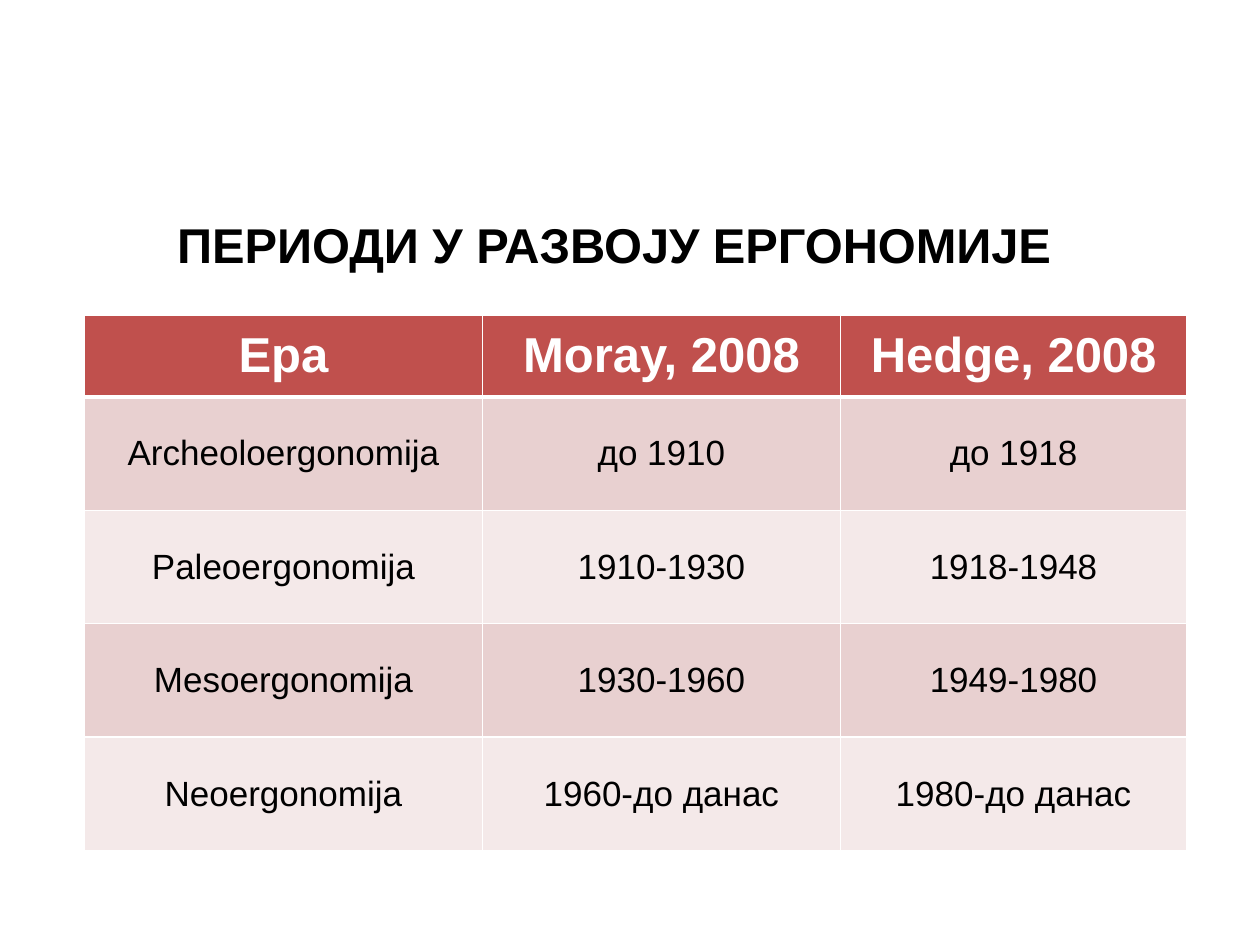
from lxml import etree
from pptx import Presentation
from pptx.dml.color import RGBColor
from pptx.enum.text import MSO_ANCHOR, PP_ALIGN
from pptx.oxml.ns import qn
from pptx.util import Inches, Pt

CENTER = PP_ALIGN.CENTER
MIDDLE = MSO_ANCHOR.MIDDLE
BOTTOM = MSO_ANCHOR.BOTTOM

BLACK = RGBColor(0x00, 0x00, 0x00)
WHITE = RGBColor(0xFF, 0xFF, 0xFF)
HEADER_RED = RGBColor(0xC0, 0x50, 0x4D)
BAND_DARK = RGBColor(0xE8, 0xD0, 0xD0)
BAND_LIGHT = RGBColor(0xF4, 0xE9, 0xE9)


def add_text(paragraph, text, size, color, bold):
    paragraph.alignment = CENTER
    run = paragraph.add_run()
    run.text = text
    run.font.name = "Arial"
    run.font.size = Pt(size)
    run.font.bold = bold
    run.font.color.rgb = color


def add_border(cell, side, points):
    properties = cell._tc.get_or_add_tcPr()
    line = etree.SubElement(properties, qn(f"a:ln{side}"), w=str(Pt(points)))
    fill = etree.SubElement(line, qn("a:solidFill"))
    etree.SubElement(fill, qn("a:srgbClr"), val=str(WHITE))


presentation = Presentation()
presentation.slide_width = Inches(10)
presentation.slide_height = Inches(7.5)
slide = presentation.slides.add_slide(presentation.slide_layouts[6])

# Title
title = slide.shapes.add_textbox(Inches(0.5), Inches(1.25), Inches(8.75), Inches(0.92))
title_frame = title.text_frame
title_frame.word_wrap = True
title_frame.vertical_anchor = BOTTOM
title_frame.margin_bottom = 0
add_text(title_frame.paragraphs[0], "ПЕРИОДИ У РАЗВОЈУ ЕРГОНОМИЈЕ", 27.9, BLACK, True)

# Table of eras
eras = [
    ("Eра", "Moray, 2008", "Hedge, 2008"),
    ("Archeoloergonomija", "до 1910", "до 1918"),
    ("Paleoergonomija", "1910-1930", "1918-1948"),
    ("Mesoergonomija", "1930-1960", "1949-1980"),
    ("Neoergonomija", "1960-до данас", "1980-до данас"),
]
table = slide.shapes.add_table(
    len(eras), 3, Inches(0.67), Inches(2.5), Inches(8.75), Inches(4.25)
).table
for column, width in zip(table.columns, (3.16, 2.84, 2.75)):
    column.width = Inches(width)

for row_index, era in enumerate(eras):
    is_header = row_index == 0
    table.rows[row_index].height = Inches(0.65 if is_header else 0.9)
    if is_header:
        fill_color, size, text_color = HEADER_RED, 28, WHITE
    else:
        fill_color = BAND_DARK if row_index % 2 else BAND_LIGHT
        size, text_color = 20, BLACK
    for column_index, text in enumerate(era):
        cell = table.cell(row_index, column_index)
        cell.vertical_anchor = MIDDLE
        add_text(cell.text_frame.paragraphs[0], text, size, text_color, is_header)
        # Borders come before the fill in the cell properties
        add_border(cell, "L", 1)
        add_border(cell, "R", 1)
        add_border(cell, "T", 3 if row_index == 1 else 1)
        add_border(cell, "B", 3 if is_header else 1)
        cell.fill.solid()
        cell.fill.fore_color.rgb = fill_color

presentation.save("out.pptx")
